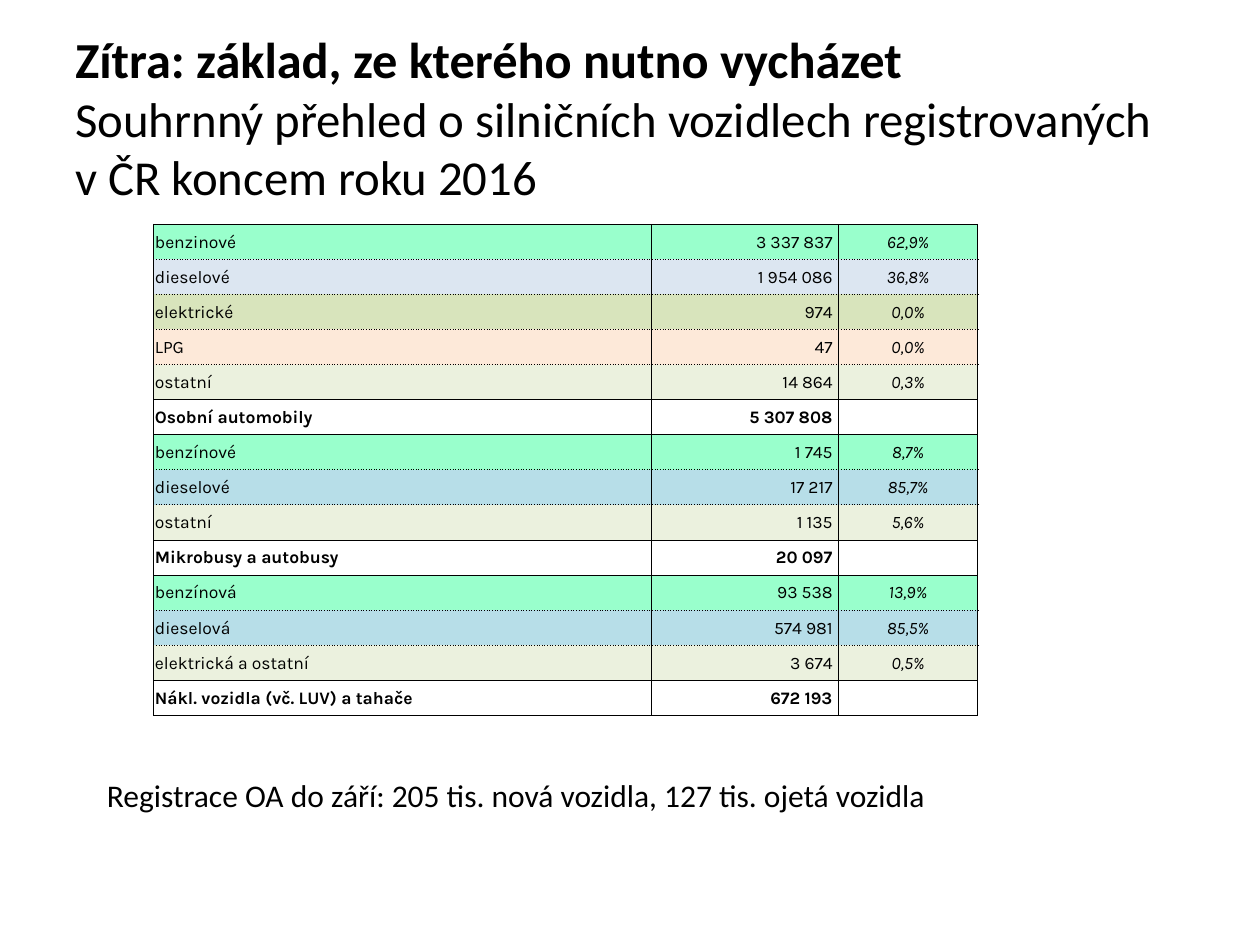
from lxml.etree import SubElement
from pptx import Presentation
from pptx.dml.color import RGBColor
from pptx.enum.text import MSO_ANCHOR as ANCHOR, PP_ALIGN as ALIGN
from pptx.oxml.ns import qn
from pptx.util import Inches, Pt

COLORS = {
    "black": "000000", "white": "FFFFFF", "petrol": "99FFCC",
    "diesel_cars": "DCE6F1", "diesel": "B7DEE8", "electric": "D8E4BC",
    "lpg": "FDE9D9", "other": "EBF1DE",
}

# Fuel, count, share, fill colour; totals have no share
ROWS = [
    ("benzinové", "3 337 837 ", "62,9%", "petrol"),
    ("dieselové", "1 954 086 ", "36,8%", "diesel_cars"),
    ("elektrické", "974 ", "0,0%", "electric"),
    ("LPG", "47 ", "0,0%", "lpg"),
    ("ostatní", "14 864 ", "0,3%", "other"),
    ("Osobní automobily", "5 307 808 ", "", None),
    ("benzínové", "1 745 ", "8,7%", "petrol"),
    ("dieselové", "17 217 ", "85,7%", "diesel"),
    ("ostatní", "1 135 ", "5,6%", "other"),
    ("Mikrobusy a autobusy", "20 097 ", "", None),
    ("benzínová", "93 538 ", "13,9%", "petrol"),
    ("dieselová", "574 981 ", "85,5%", "diesel"),
    ("elektrická a ostatní", "3 674 ", "0,5%", "other"),
    ("Nákl. vozidla (vč. LUV) a tahače", "672 193 ", "", None),
]


def add_run(paragraph, text, size, font="Calibri", bold=False, italic=False):
    run = paragraph.add_run()
    run.text = text
    run.font.name = font
    run.font.size = Pt(size)
    run.font.bold = bold
    run.font.italic = italic
    run.font.color.rgb = RGBColor.from_string(COLORS["black"])


def set_borders(cell, dashes):
    """Draw thin black sides in the order left, right, top, bottom."""
    props = cell._tc.get_or_add_tcPr()
    for position, (side, dash) in enumerate(zip("LRTB", dashes)):
        line = SubElement(props, qn(f"a:ln{side}"), w=str(Pt(0.5)))
        fill = SubElement(line, qn("a:solidFill"))
        SubElement(fill, qn("a:srgbClr"), val=COLORS["black"])
        SubElement(line, qn("a:prstDash"), val=dash)
        props.insert(position, line)


prs = Presentation()
prs.slide_width, prs.slide_height = Inches(10), Inches(7.5)
slide = prs.slides.add_slide(prs.slide_layouts[6])

# Title
title = slide.shapes.add_textbox(Inches(0.5), Inches(0.3), Inches(9), Inches(1.25)).text_frame
title.word_wrap = True
title.vertical_anchor = ANCHOR.MIDDLE
heading = title.paragraphs[0]
add_run(heading, "Zítra: základ, ze kterého nutno vycházet", 28.8, bold=True)
heading.add_line_break()
add_run(heading, "Souhrnný přehled o silničních vozidlech registrovaných v ČR koncem roku 2016", 27.9)

# Table of registered vehicles
vehicles = slide.shapes.add_table(
    len(ROWS), 3, Inches(1.22), Inches(1.78), Inches(6.54), Inches(3.9)).table
vehicles.first_row = vehicles.horz_banding = False
for column, width in zip(vehicles.columns, (3.95, 1.48, 1.11)):
    column.width = Inches(width)

for r, (*values, fill) in enumerate(ROWS):
    is_total = fill is None
    # Lines are dotted between fuels, solid around totals and the table
    top = "solid" if is_total or r == 0 or ROWS[r - 1][3] is None else "dot"
    bottom = "solid" if is_total or ROWS[r + 1][3] is None else "dot"
    for c, (text, align) in enumerate(zip(values, (ALIGN.LEFT, ALIGN.RIGHT, ALIGN.CENTER))):
        cell = vehicles.cell(r, c)
        cell.margin_left = cell.margin_right = cell.margin_top = Inches(0.01)
        cell.margin_bottom = 0
        cell.vertical_anchor = ANCHOR.MIDDLE
        if is_total:
            cell.fill.background()
        else:
            cell.fill.solid()
            cell.fill.fore_color.rgb = RGBColor.from_string(COLORS[fill])
        set_borders(cell, ("solid", "solid", top, bottom))
        paragraph = cell.text_frame.paragraphs[0]
        paragraph.alignment = align
        if text:
            add_run(paragraph, text, 10, "Karla", bold=is_total, italic=c == 2)
        else:
            # Keeps an empty cell from stretching its row
            SubElement(paragraph._p, qn("a:endParaRPr"), sz="1000")

# Note on registrations
note = slide.shapes.add_textbox(Inches(0.75), Inches(6.11), Inches(6.93), Inches(0.4)).text_frame
note.word_wrap = True
add_run(note.paragraphs[0],
        "Registrace OA do září: 205 tis. nová vozidla, 127 tis. ojetá vozidla", 18)

prs.save("out.pptx")
